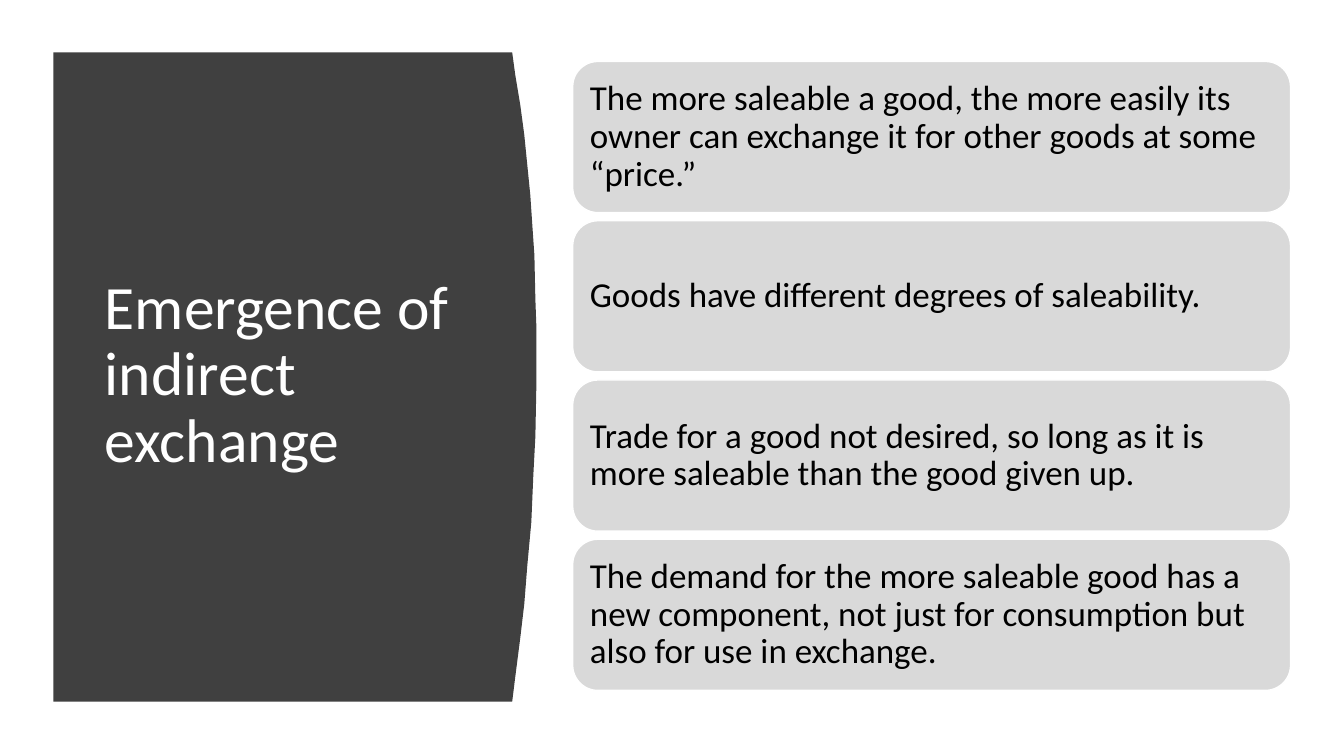
"""Build the slide on the emergence of indirect exchange."""
from pptx import Presentation
from pptx.dml.color import RGBColor
from pptx.enum.shapes import MSO_SHAPE
from pptx.enum.text import MSO_ANCHOR, MSO_AUTO_SIZE, PP_ALIGN
from pptx.util import Pt

ROUNDED = MSO_SHAPE.ROUNDED_RECTANGLE
MIDDLE = MSO_ANCHOR.MIDDLE
LEFT = PP_ALIGN.LEFT
NO_AUTOFIT = MSO_AUTO_SIZE.NONE
TITLE_ONLY = 5

TITLE = "Emergence of indirect exchange"
POINTS = [
    "The more saleable a good, the more easily its owner can exchange it for other goods at some “price.”",
    "Goods have different degrees of saleability.",
    "Trade for a good not desired, so long as it is more saleable than the good given up.",
    "The demand for the more saleable good has a new component, not just for consumption but also for use in exchange.",
]
COLORS = {"panel": "404040", "card": "D9D9D9", "white": "FFFFFF", "text": "000000"}

PX = 9144
SLIDE_SIZE = (1333, 750)
TITLE_BOX = (94, 111, 374, 524)
PANEL_LEFT = 53
PANEL_EDGE = [
    (508, 52), (511, 74), (516, 104), (520, 134), (523, 164), (526, 194),
    (528, 224), (530, 253), (531, 297), (532, 325), (532, 380), (531, 433),
    (529, 471), (527, 518), (523, 561), (520, 599), (516, 633), (511, 672),
    (508, 696),
]
CARD_LEFT, CARD_TOP, CARD_WIDTH, CARD_HEIGHT = 568, 61, 712, 150
CARD_PITCH = 158
INSET = 10


def color(name):
    return RGBColor.from_string(COLORS[name])


def paint(shape, fill):
    shape.shadow.inherit = False
    shape.fill.solid()
    shape.fill.fore_color.rgb = color(fill)


def write(shape, text, size, text_color, inset):
    frame = shape.text_frame
    frame.text = text
    frame_format = {
        "word_wrap": True,
        "auto_size": NO_AUTOFIT,
        "vertical_anchor": MIDDLE,
        "margin_left": inset * PX,
        "margin_right": inset * PX,
        "margin_top": inset * PX,
        "margin_bottom": inset * PX,
    }
    for name, value in frame_format.items():
        setattr(frame, name, value)
    paragraph = frame.paragraphs[0]
    paragraph.alignment = LEFT
    paragraph.line_spacing = 0.9
    font = paragraph.runs[0].font
    for name, value in {"name": "Calibri", "size": Pt(size), "bold": False}.items():
        setattr(font, name, value)
    font.color.rgb = color(text_color)


def add_panel(slide):
    corners = [(PANEL_LEFT, PANEL_EDGE[-1][1]), (PANEL_LEFT, PANEL_EDGE[0][1])]
    builder = slide.shapes.build_freeform(*PANEL_EDGE[0], scale=PX)
    builder.add_line_segments(PANEL_EDGE[1:] + corners, close=True)
    panel = builder.convert_to_shape()
    paint(panel, "panel")
    panel.line.fill.background()
    return panel


def add_title(slide, panel):
    title = slide.shapes.title
    title.left, title.top, title.width, title.height = (n * PX for n in TITLE_BOX)
    write(title, TITLE, 44, "white", INSET)
    panel.element.addnext(title.element)


def add_cards(slide):
    for index, text in enumerate(POINTS):
        box = (CARD_LEFT, CARD_TOP + index * CARD_PITCH, CARD_WIDTH, CARD_HEIGHT)
        card = slide.shapes.add_shape(ROUNDED, *(n * PX for n in box))
        paint(card, "card")
        card.line.color.rgb = color("white")
        card.line.width = Pt(1)
        write(card, text, 25, "text", INSET)


def main():
    presentation = Presentation()
    presentation.slide_width, presentation.slide_height = (n * PX for n in SLIDE_SIZE)
    slide = presentation.slides.add_slide(presentation.slide_layouts[TITLE_ONLY])
    panel = add_panel(slide)
    add_title(slide, panel)
    add_cards(slide)
    presentation.save("out.pptx")


if __name__ == "__main__":
    main()
